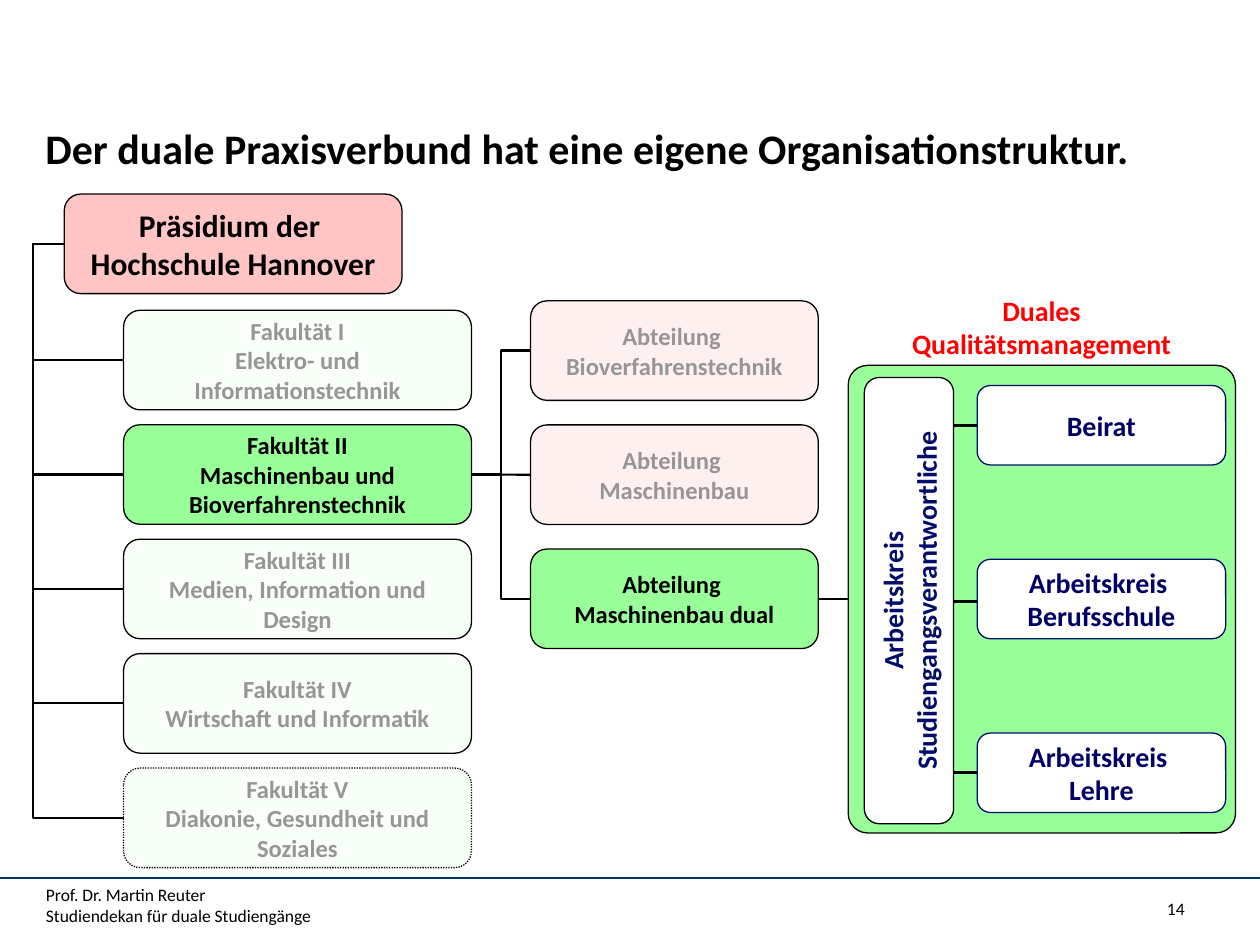
import pptx
import pptx.util
import pptx.dml.color
import pptx.enum.dml
import pptx.enum.shapes
import pptx.enum.text
import pptx.oxml.ns
import lxml.etree

Pt = pptx.util.Pt
Shapes = pptx.enum.shapes.MSO_SHAPE
Connectors = pptx.enum.shapes.MSO_CONNECTOR
Anchor = pptx.enum.text.MSO_ANCHOR
Align = pptx.enum.text.PP_ALIGN
qn = pptx.oxml.ns.qn

FONT = "Calibri"
COLORS = {
    "black": "000000", "white": "FFFFFF", "gray": "969696", "red": "FF0000",
    "rose": "FFC5C5", "pink": "FFCCCC", "mint": "CCFFCC", "green": "99FF99",
    "navy": "000066", "outline": "000E6B", "rule": "00305D",
}
BOX_HEIGHT = 56.9
FACULTY_STEP = 65.4
DEPARTMENT_STEP = 70.9
FACULTIES = [
    "Fakultät I\nElektro- und Informationstechnik",
    "Fakultät II\nMaschinenbau und Bioverfahrenstechnik",
    "Fakultät III\nMedien, Information und Design",
    "Fakultät IV\nWirtschaft und Informatik",
    "Fakultät V\nDiakonie, Gesundheit und Soziales",
]
DEPARTMENTS = [
    "Abteilung \nBioverfahrenstechnik",
    "Abteilung \nMaschinenbau",
    "Abteilung \nMaschinenbau dual",
]
COMMITTEES = ["Beirat", "Arbeitskreis \nBerufsschule", "Arbeitskreis \nLehre"]


def color(name):
    return pptx.dml.color.RGBColor.from_string(COLORS[name])


def write(shape, text, size, font_color="black", bold=True, align=Align.CENTER,
          anchor=Anchor.MIDDLE, wrap=True):
    frame = shape.text_frame
    frame.text = text
    frame.word_wrap = wrap
    frame.vertical_anchor = anchor
    for paragraph in frame.paragraphs:
        paragraph.alignment = align
        for run in paragraph.runs:
            run.font.name = FONT
            run.font.size = Pt(size)
            run.font.bold = bold
            run.font.color.rgb = color(font_color)


def add_text(slide, box, text, size, **style):
    shape = slide.shapes.add_textbox(*map(Pt, box))
    write(shape, text, size, anchor=Anchor.TOP, **style)


def add_box(slide, kind, box, fill, line="black", opacity=None):
    shape = slide.shapes.add_shape(kind, *map(Pt, box))
    shape.shadow.inherit = False
    shape.fill.solid()
    shape.fill.fore_color.rgb = color(fill)
    shape.line.color.rgb = color(line)
    shape.line.width = Pt(0.75)
    if opacity:
        rgb = shape.fill._xPr.find(".//" + qn("a:srgbClr"))
        lxml.etree.SubElement(rgb, qn("a:alpha")).set("val", str(opacity * 1000))
    return shape


def add_unit(slide, box, text, active, fill, opacity):
    kind = Shapes.FLOWCHART_ALTERNATE_PROCESS
    if active:
        shape = add_box(slide, kind, box, "green")
    else:
        shape = add_box(slide, kind, box, fill, opacity=opacity)
    write(shape, text, 14, "black" if active else "gray")
    return shape


def add_line(slide, start, end, width=1.25, line="black", bend=None):
    kind = Connectors.STRAIGHT if bend is None else Connectors.ELBOW
    connector = slide.shapes.add_connector(kind, *map(Pt, start + end))
    connector.line.color.rgb = color(line)
    connector.line.width = Pt(width)
    properties = connector._element.spPr
    lxml.etree.SubElement(properties, qn("a:effectLst"))
    if bend is not None:
        guides = properties.find(qn("a:prstGeom")).get_or_add_avLst()
        guide = lxml.etree.SubElement(guides, qn("a:gd"))
        guide.set("name", "adj1")
        guide.set("fmla", f"val {round(bend * 100000)}")


def add_title(slide, box):
    title = slide.shapes.title
    title.left, title.top, title.width, title.height = map(Pt, box)
    write(title, "Der duale Praxisverbund hat eine eigene Organisationstruktur.", 24,
          align=Align.LEFT, anchor=Anchor.TOP)
    title.text_frame.auto_size = pptx.enum.text.MSO_AUTO_SIZE.NONE


def add_faculties(slide, box):
    left, top, width, height = box
    board = (left + 18, top, 193, BOX_HEIGHT)
    board_middle = top + BOX_HEIGHT / 2
    unit_left, unit_top, unit_width = left + 51.9, top + 66.4, width - 51.9
    for index, text in enumerate(FACULTIES):
        y = unit_top + index * FACULTY_STEP
        add_line(slide, (board[0], board_middle), (unit_left, y + BOX_HEIGHT / 2),
                 bend=-18 / (unit_left - board[0]))
        unit = add_unit(slide, (unit_left, y, unit_width, BOX_HEIGHT), text,
                        index == 1, "mint", 15)
    unit.line.dash_style = pptx.enum.dml.MSO_LINE.ROUND_DOT
    shape = add_box(slide, Shapes.FLOWCHART_ALTERNATE_PROCESS, board, "rose")
    write(shape, "Präsidium der \vHochschule Hannover", 18, wrap=False)


def add_departments(slide, box, source):
    left, top, width, height = box
    for index, text in enumerate(DEPARTMENTS):
        y = top + index * DEPARTMENT_STEP
        middle = y + BOX_HEIGHT / 2
        bend = None if index == 1 else 0.5
        add_line(slide, source, (left, middle), bend=bend)
        add_unit(slide, (left, y, width, BOX_HEIGHT), text, index == 2, "pink", 28)


def add_quality_management(slide, box, source):
    left, top, width, height = box
    add_line(slide, source, (left, source[1]))
    add_text(slide, (left + 14.4, top - 44.8, 192.2, 46),
             "Duales Qualitätsmanagement", 16, font_color="red")
    panel = add_box(slide, Shapes.ROUNDED_RECTANGLE, box, "green")
    panel.adjustments[0] = 0.05

    bar_width, bar_height = 51, 255
    bar_left = left + 9.2
    bar_middle = top + 134.4
    bar = add_box(slide, Shapes.ROUNDED_RECTANGLE,
                  (bar_left + (bar_width - bar_height) / 2, bar_middle - bar_width / 2,
                   bar_height, bar_width), "white")
    bar.rotation = 270
    write(bar, "Arbeitskreis\nStudiengangsverantwortliche", 16, "outline", wrap=False)

    unit_left, unit_height = left + 73.7, 45.4
    line_offsets = (34.2, 135, 232.5)
    for index, (text, offset) in enumerate(zip(COMMITTEES, line_offsets)):
        add_line(slide, (bar_left + bar_width, top + offset),
                 (unit_left, top + offset), 1.5)
        unit = add_box(slide, Shapes.ROUNDED_RECTANGLE,
                       (unit_left, top + 11.5 + index * 99.3, 142, unit_height),
                       "white", "outline")
        write(unit, text, 16, "navy", wrap=False)


def add_footer(slide, box):
    left, top, width, height = box
    add_line(slide, (left, top), (left + width, top), 0.75, "rule")
    add_text(slide, (left + 19.2, top, 481.7, height),
             "Prof. Dr. Martin Reuter \vStudiendekan für duale Studiengänge", 10,
             bold=False, align=Align.LEFT)
    add_text(slide, (left + 552.2, top + 8, 131.8, 18), "14", 10,
             bold=False, align=Align.RIGHT)


def main():
    presentation = pptx.Presentation()
    presentation.slide_width, presentation.slide_height = Pt(720), Pt(540)
    slide = presentation.slides.add_slide(presentation.slide_layouts[5])
    add_footer(slide, (0, 501.7, 720, 28))
    add_faculties(slide, (18.7, 110.9, 250.7, 385))
    add_departments(slide, (303.2, 171.9, 164.4, 198.7), (269.4, 271.2))
    add_title(slide, (18.7, 66.2, 680, 36))
    add_quality_management(slide, (484.7, 208.8, 221.3, 267.2), (467.6, 342.4))
    presentation.save("out.pptx")


if __name__ == "__main__":
    main()
